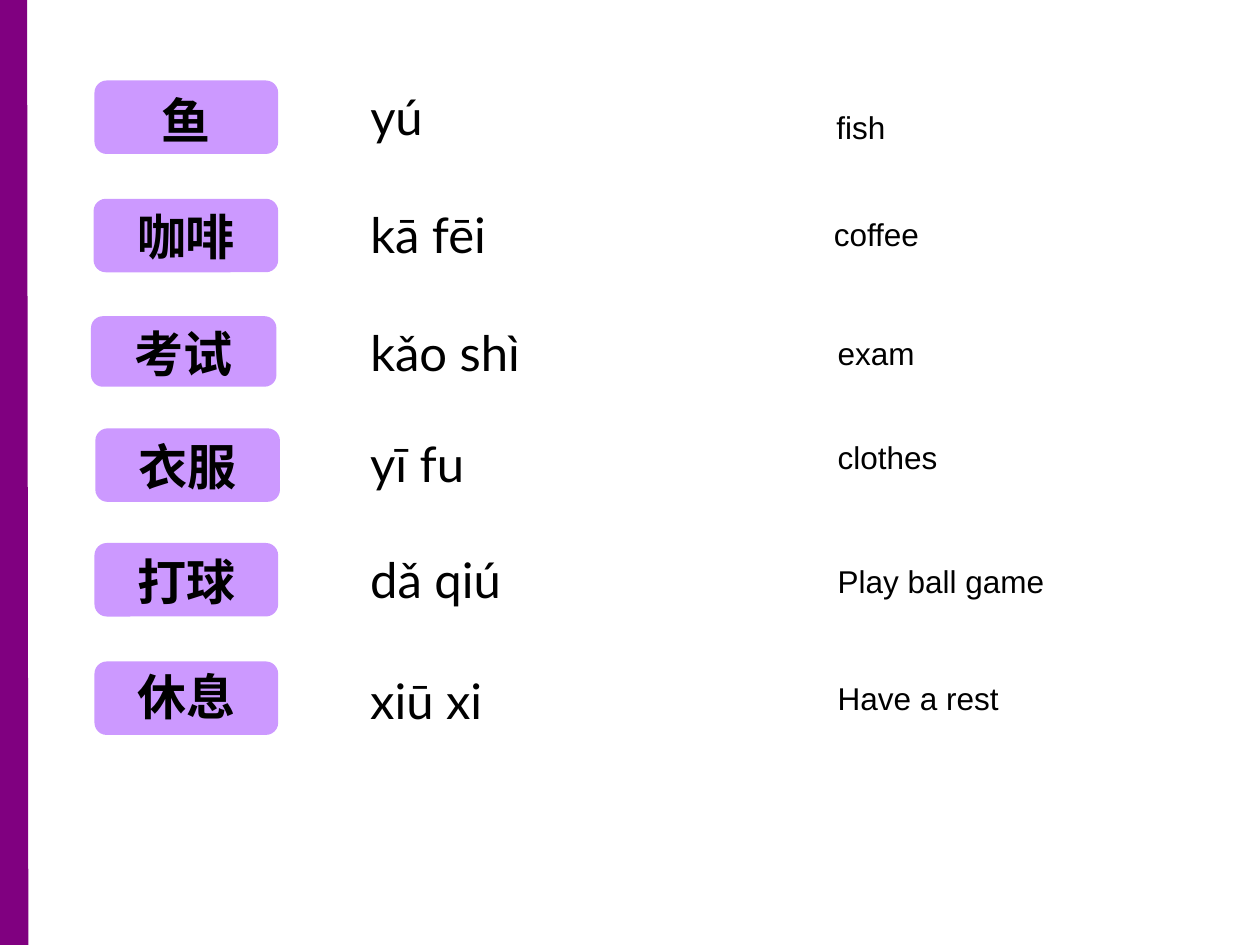
import pptx
import pptx.dml.color
import pptx.enum.shapes
import pptx.enum.text
import pptx.util
from lxml import etree
from pptx.oxml.ns import qn

Pt = pptx.util.Pt
Align = pptx.enum.text.PP_ALIGN
COLORS = {"text": "000000", "card": "CC99FF", "edge": "800080"}

# hanzi, card (left, top, width, height), hanzi (top, width),
# pinyin, pinyin (top, width), meaning, meaning (left, top)
WORDS = [
    ("鱼", (54, 46, 105, 42), (48.2, 99.4), "yú", (46, 44.6), "fish", (470.9, 58.3)),
    ("咖啡", (53.5, 113.6, 105.5, 42), (114.5, 71.3), "kā fēi", (113.6, 95), "coffee", (469.4, 119.5)),
    ("考试", (52, 180.7, 106, 40.3), (181.4, 72), "kǎo shì", (180.7, 113.8), "exam", (471.6, 187.2)),
    ("衣服", (54.5, 244.8, 105.5, 42), (246.2, 71.3), "yī fu", (244.1, 84.2), "clothes", (471.6, 247)),
    ("打球", (54, 310.3, 105, 42), (311.8, 71.3), "dǎ qiú", (310.3, 115.2), "Play ball game", (471.6, 317.5)),
    ("休息", (54, 378, 105, 42), (377.3, 71.3), "xiū xi", (379.4, 112.3), "Have a rest", (471.6, 384.5)),
]


class VocabularySlide:
    def __init__(self, slide):
        self.shapes = slide.shapes

    def color(self, name):
        return pptx.dml.color.RGBColor.from_string(COLORS[name])

    def text(self, words, area, font, size, bold=False, align=Align.LEFT, wrap=False, parent=None):
        box = (parent or self.shapes).add_textbox(*map(Pt, area))
        frame = box.text_frame
        frame.word_wrap = wrap
        frame.auto_size = pptx.enum.text.MSO_AUTO_SIZE.SHAPE_TO_FIT_TEXT
        para = frame.paragraphs[0]
        para.alignment = align
        span = para.add_run()
        span.text = words
        span.font.name = font
        span.font.size = Pt(size)
        span.font.bold = bold
        span.font.color.rgb = self.color("text")

    def card(self, hanzi, area, text_top, text_width):
        """Group a rounded card with its centred characters."""
        left, _, width, _ = area
        group = self.shapes.add_group_shape().shapes
        card = group.add_shape(
            pptx.enum.shapes.MSO_SHAPE.ROUNDED_RECTANGLE, *map(Pt, area))
        card.shadow.inherit = False
        card.fill.solid()
        card.fill.fore_color.rgb = self.color("card")
        card.line.fill.background()
        text_left = left + (width - text_width) / 2
        self.text(hanzi, (text_left, text_top, text_width, 41.5), "Calibri", 28,
                  bold=True, align=Align.CENTER, parent=group)

    def line(self, start, end, color, width):
        line = self.shapes.add_connector(
            pptx.enum.shapes.MSO_CONNECTOR.STRAIGHT, *map(Pt, start + end))
        line.line.color.rgb = self.color(color)
        line.line.width = Pt(width)
        etree.SubElement(line._element.spPr, qn("a:effectLst"))


def main():
    deck = pptx.Presentation()
    deck.slide_width, deck.slide_height = Pt(720), Pt(540)
    page = VocabularySlide(deck.slides.add_slide(deck.slide_layouts[6]))
    page.line((7.2, 540), (6.5, -1.4), "edge", 18)
    for hanzi, area, hanzi_place, pinyin, (top, width), meaning, meaning_place in WORDS:
        page.card(hanzi, area, *hanzi_place)
        page.text(pinyin, (204.5, top, width, 41), "Lato", 28)
        page.text(meaning, (*meaning_place, 162.7, 28.8), "Arial", 18, wrap=True)
    deck.save("out.pptx")


if __name__ == "__main__":
    main()
